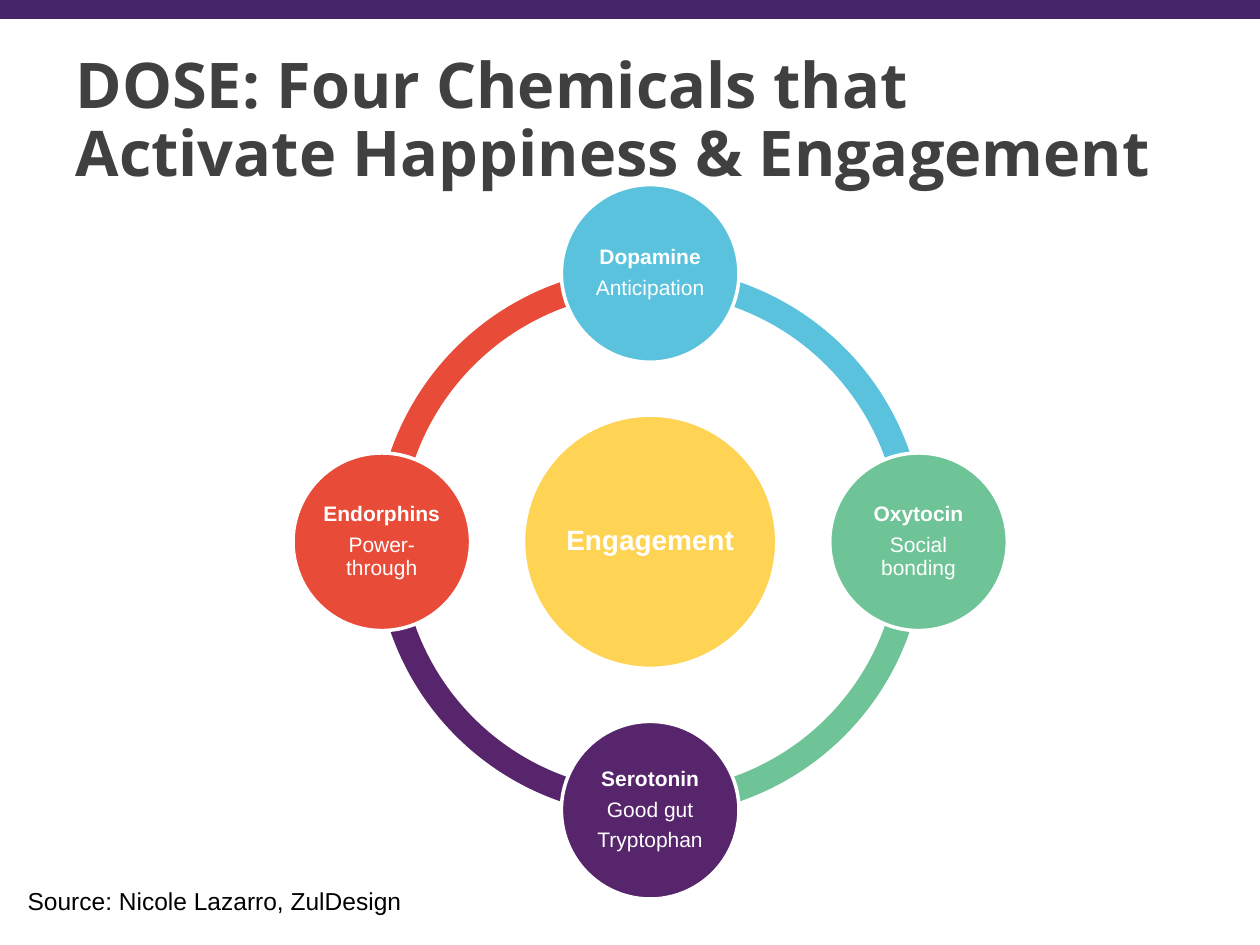
from pptx import Presentation
from pptx.dml.color import RGBColor
from pptx.enum.shapes import MSO_SHAPE as Shape
from pptx.enum.text import MSO_ANCHOR as Anchor, MSO_AUTO_SIZE as AutoSize, PP_ALIGN as Align
from pptx.util import Inches, Pt

WHITE = RGBColor(0xFF, 0xFF, 0xFF)
BLACK = RGBColor(0, 0, 0)
GRAY = RGBColor(0x40, 0x40, 0x40)
BAR = RGBColor(0x46, 0x25, 0x6B)
YELLOW = RGBColor(0xFF, 0xD3, 0x53)
BLUE = RGBColor(0x5A, 0xC2, 0xDD)
GREEN = RGBColor(0x6F, 0xC4, 0x97)
PURPLE = RGBColor(0x56, 0x25, 0x6B)
RED = RGBColor(0xE9, 0x4B, 0x39)

TITLE = "DOSE: Four Chemicals that Activate Happiness & Engagement"
SOURCE = "Source: Nicole Lazarro, ZulDesign"
HUB = ["Engagement"]
CHEMICALS = [
    (["Dopamine", "Anticipation"], BLUE, (0, -1)),
    (["Oxytocin", "Social bonding"], GREEN, (1, 0)),
    (["Serotonin", "Good gut", "Tryptophan"], PURPLE, (0, 1)),
    (["Endorphins", "Power-through"], RED, (-1, 0)),
]

CENTER_X, CENTER_Y = 5.16, 4.3
ORBIT = 2.13
RING_SIZE, HUB_SIZE, NODE_SIZE = 4.36, 2.01, 1.41
QUARTER_TURN, FULL_TURN = 54, 216
RING_THICKNESS = 0.046


def add_filled(slide, kind, left, top, width, height, color):
    shape = slide.shapes.add_shape(
        kind, Inches(left), Inches(top), Inches(width), Inches(height))
    shape.shadow.inherit = False
    shape.fill.solid()
    shape.fill.fore_color.rgb = color
    shape.line.fill.background()
    return shape


def add_centered(slide, kind, x, y, size, color):
    return add_filled(slide, kind, x - size / 2, y - size / 2, size, size, color)


def set_font(paragraph, name, size, color, bold=False):
    for run in paragraph.runs:
        run.font.name = name
        run.font.size = Pt(size)
        run.font.bold = bold
        run.font.color.rgb = color


def add_circle(slide, lines, x, y, size, color, font_size):
    circle = add_centered(slide, Shape.OVAL, x, y, size, color)
    circle.line.color.rgb = WHITE
    circle.line.width = Pt(2)
    frame = circle.text_frame
    frame.word_wrap = True
    frame.vertical_anchor = Anchor.MIDDLE
    frame.margin_left = frame.margin_right = Inches(0.02)
    frame.margin_top = frame.margin_bottom = Inches(0.02)
    frame.text = "\n".join(lines)
    for index, paragraph in enumerate(frame.paragraphs):
        paragraph.alignment = Align.CENTER
        paragraph.line_spacing = 0.9
        paragraph.space_after = Pt(4.7)
        set_font(paragraph, "Arial", font_size, WHITE, bold=index == 0)


def add_title(slide):
    title = slide.shapes.title
    title.left, title.top = Inches(0.5), Inches(0.3)
    title.width, title.height = Inches(9), Inches(1.25)
    frame = title.text_frame
    frame.text = TITLE
    frame.word_wrap = True
    frame.auto_size = AutoSize.NONE
    frame.vertical_anchor = Anchor.BOTTOM
    frame.margin_left = frame.margin_right = Inches(0.1)
    frame.margin_top, frame.margin_bottom = 0, Inches(0.04)
    paragraph = frame.paragraphs[0]
    paragraph.alignment = Align.LEFT
    paragraph.line_spacing = 0.9
    set_font(paragraph, "Open Sans", 36, GRAY, bold=True)


def add_cycle(slide):
    for index, (_, color, _) in enumerate(CHEMICALS):
        arc = add_centered(slide, Shape.BLOCK_ARC, CENTER_X, CENTER_Y, RING_SIZE, color)
        start = (index + 3) * QUARTER_TURN % FULL_TURN
        arc.adjustments[0] = start
        arc.adjustments[1] = (start + QUARTER_TURN) % FULL_TURN
        arc.adjustments[2] = RING_THICKNESS
    add_circle(slide, HUB, CENTER_X, CENTER_Y, HUB_SIZE, YELLOW, 16)
    for lines, color, (across, down) in CHEMICALS:
        add_circle(slide, lines, CENTER_X + across * ORBIT, CENTER_Y + down * ORBIT,
                   NODE_SIZE, color, 12)


def add_source(slide):
    box = slide.shapes.add_textbox(Inches(0.12), Inches(6.98), Inches(3.62), Inches(0.34))
    box.text_frame.word_wrap = True
    box.text_frame.text = SOURCE
    set_font(box.text_frame.paragraphs[0], "Arial", 14, BLACK)


def main():
    presentation = Presentation()
    presentation.slide_width, presentation.slide_height = Inches(10), Inches(7.5)
    slide = presentation.slides.add_slide(presentation.slide_layouts[5])
    add_filled(slide, Shape.RECTANGLE, 0, 0, 10, 0.15, BAR)
    add_cycle(slide)
    add_title(slide)
    add_source(slide)
    presentation.save("out.pptx")


if __name__ == "__main__":
    main()
